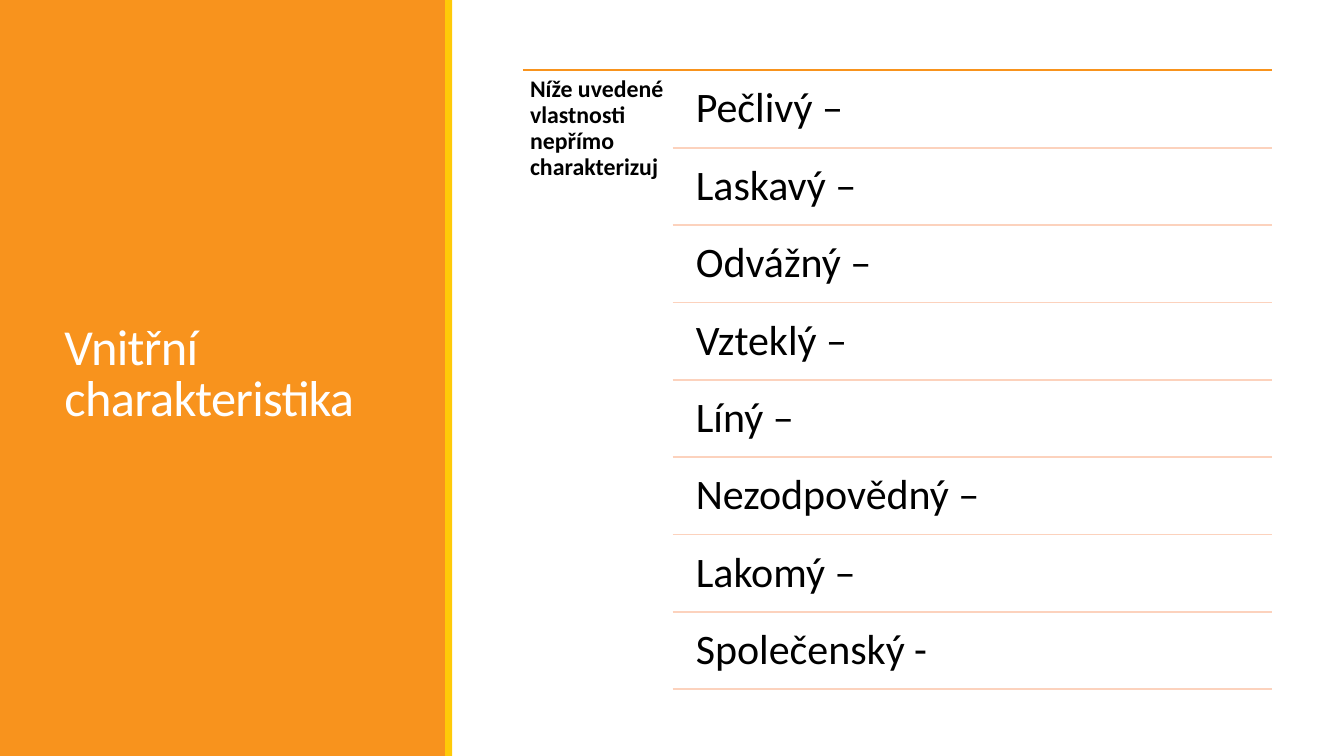
from pptx import Presentation
from pptx.dml.color import RGBColor
from pptx.enum.shapes import MSO_CONNECTOR, MSO_SHAPE
from pptx.enum.text import MSO_ANCHOR
from pptx.oxml.ns import qn
from pptx.util import Pt

STRAIGHT = MSO_CONNECTOR.STRAIGHT
RECTANGLE = MSO_SHAPE.RECTANGLE
TOP = MSO_ANCHOR.TOP
MIDDLE = MSO_ANCHOR.MIDDLE

ORANGE = RGBColor(0xF8, 0x93, 0x1D)
YELLOW = RGBColor(0xFF, 0xCA, 0x08)
PEACH = RGBColor(0xFC, 0xD2, 0xBD)
WHITE = RGBColor(0xFF, 0xFF, 0xFF)
BLACK = RGBColor(0x00, 0x00, 0x00)

SLIDE_WIDTH, SLIDE_HEIGHT = 960, 540
LIST_LEFT, LIST_TOP, LIST_RIGHT = 373.5, 50.2, 908.6
TRAIT_LEFT, RULE_LEFT = 488, 480.5
ROW_PITCH, ROW_HEIGHT, ROW_GAP = 55.25, 52.6, 2.75
TRAITS = ["Pečlivý –", "Laskavý –", "Odvážný –", "Vzteklý –",
          "Líný –", "Nezodpovědný –", "Lakomý –", "Společenský -"]

presentation = Presentation()
presentation.slide_width = Pt(SLIDE_WIDTH)
presentation.slide_height = Pt(SLIDE_HEIGHT)
slide = presentation.slides.add_slide(presentation.slide_layouts[6])


def add_text(text, left, top, width, height, *, size, color=BLACK, bold=False,
             inset=0, anchor=TOP, line_spacing=0.9, letter_spacing=0):
    """Add a one-paragraph text box; letter_spacing is in hundredths of a point."""
    box = slide.shapes.add_textbox(Pt(left), Pt(top), Pt(width), Pt(height))
    frame = box.text_frame
    frame.word_wrap = True
    frame.vertical_anchor = anchor
    frame.margin_left = frame.margin_right = Pt(inset)
    frame.margin_top = frame.margin_bottom = Pt(inset)
    paragraph = frame.paragraphs[0]
    paragraph.line_spacing = line_spacing
    run = paragraph.add_run()
    run.text = text
    run.font.name = "Calibri"
    run.font.size = Pt(size)
    run.font.bold = bold
    run.font.color.rgb = color
    if letter_spacing:
        run.font._element.set("spc", str(letter_spacing))


def add_rule(left, y, color):
    """Add a horizontal line from left to the right edge of the list."""
    rule = slide.shapes.add_connector(STRAIGHT, Pt(left), Pt(y), Pt(LIST_RIGHT), Pt(y))
    rule.line.color.rgb = color
    rule.line.width = Pt(1.25)
    properties = rule._element.spPr
    properties.append(properties.makeelement(qn("a:effectLst"), {}))


# Side panel with its title
for left, width, color in [(0, 319, ORANGE), (318, 5, YELLOW)]:
    panel = slide.shapes.add_shape(RECTANGLE, Pt(left), 0, Pt(width), Pt(SLIDE_HEIGHT))
    panel.shadow.inherit = False
    panel.fill.solid()
    panel.fill.fore_color.rgb = color
    panel.line.fill.background()

add_text("Vnitřní charakteristika", 39, 41, 242.6, 454.3, size=36, color=WHITE,
         inset=7.2, anchor=MIDDLE, line_spacing=0.85, letter_spacing=-50)

# Task and list of traits
add_rule(LIST_LEFT, LIST_TOP, ORANGE)
add_text("Níže uvedené vlastnosti nepřímo charakterizuj", LIST_LEFT, LIST_TOP,
         107, 445, size=17, bold=True, inset=5.1)

for row, trait in enumerate(TRAITS):
    row_top = LIST_TOP + ROW_GAP + row * ROW_PITCH
    add_text(trait, TRAIT_LEFT, row_top, LIST_RIGHT - TRAIT_LEFT, ROW_HEIGHT,
             size=30, inset=9)
    add_rule(RULE_LEFT, row_top + ROW_HEIGHT, PEACH)

presentation.save("out.pptx")
